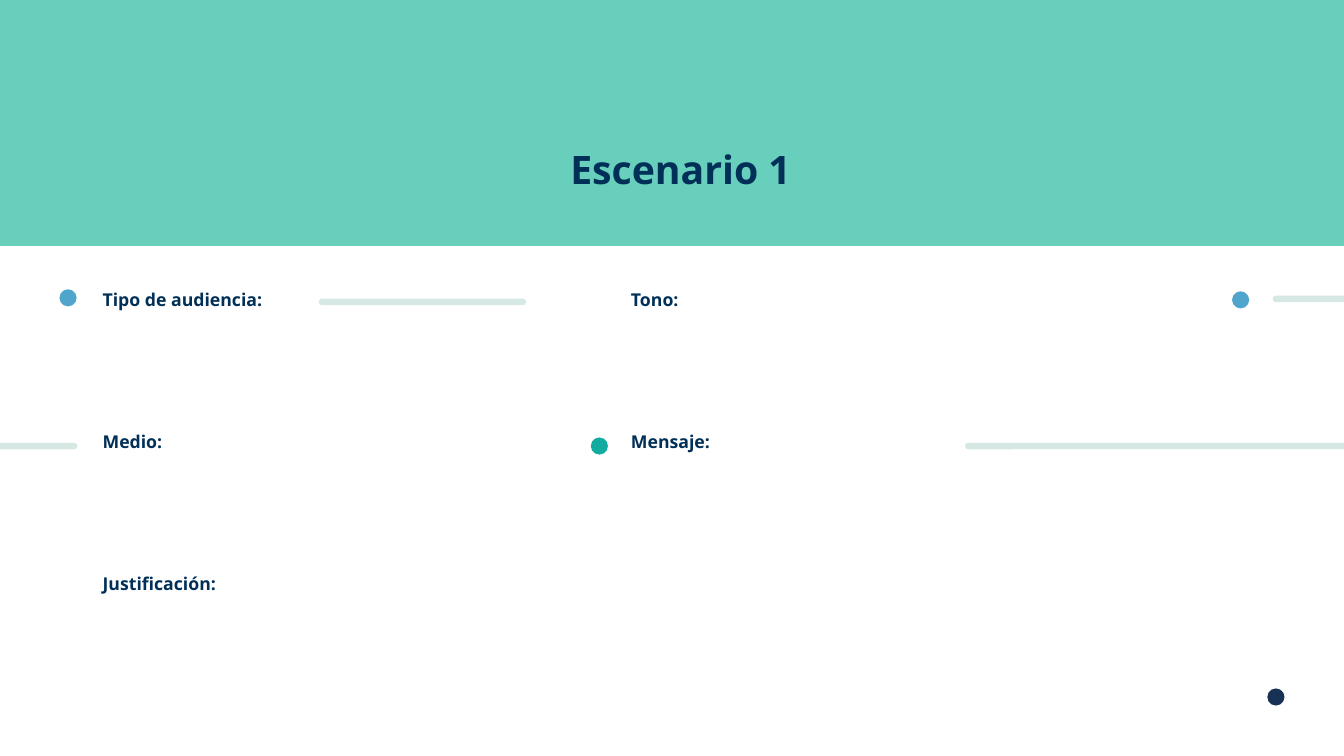
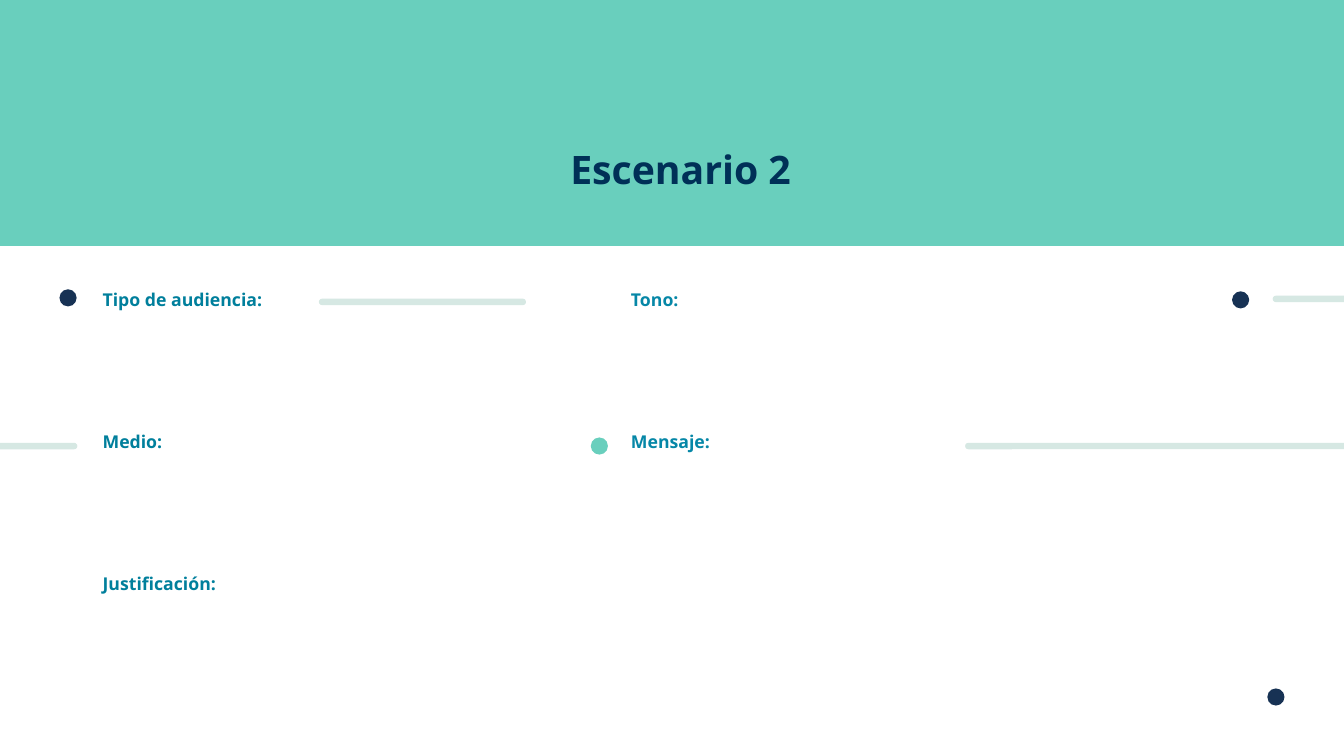
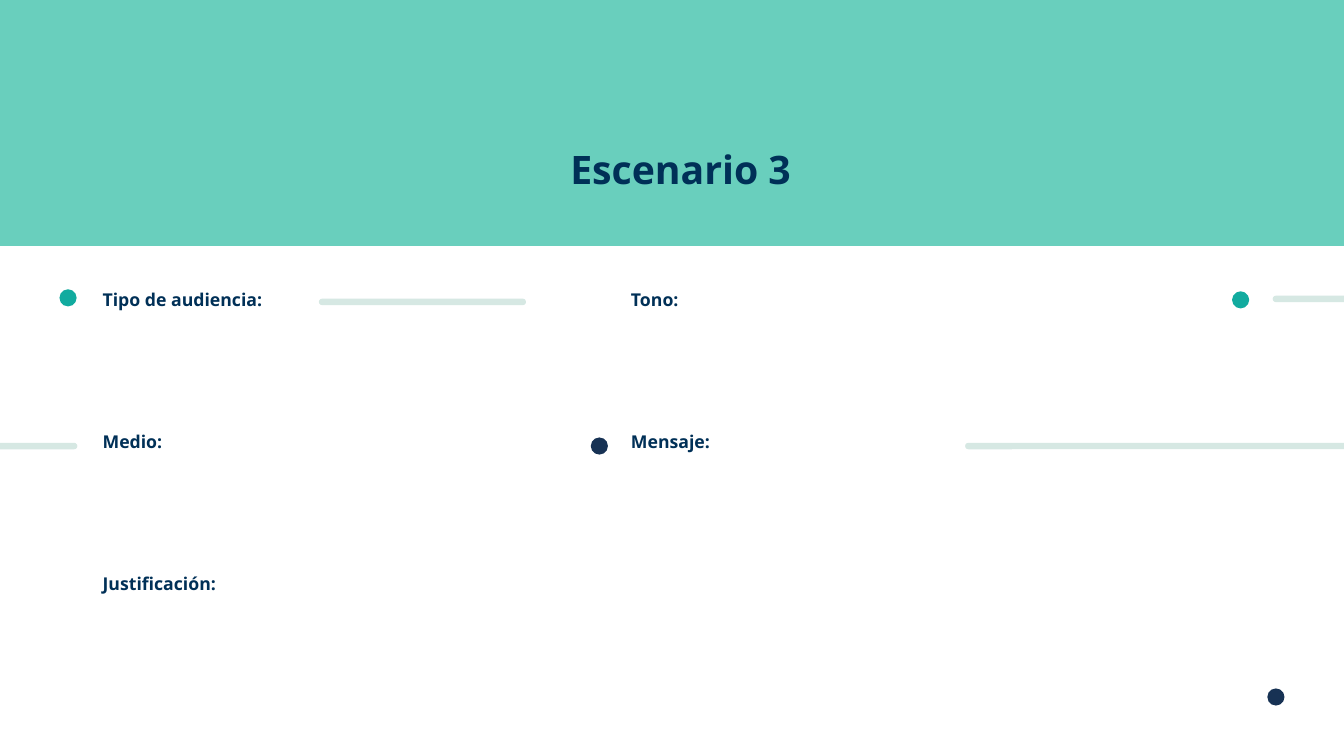
import pptx
import pptx.util
import pptx.dml.color
import pptx.enum.shapes
import pptx.enum.text

Inches = pptx.util.Inches
Pt = pptx.util.Pt
RGBColor = pptx.dml.color.RGBColor
Shape = pptx.enum.shapes.MSO_SHAPE
Anchor = pptx.enum.text.MSO_ANCHOR
Align = pptx.enum.text.PP_ALIGN

# Shared colours and font
MINT = RGBColor(0x69, 0xCF, 0xBD)
NAVY = RGBColor(0x00, 0x30, 0x57)
INK = RGBColor(0x17, 0x32, 0x54)
SKY = RGBColor(0x4F, 0xA5, 0xCB)
TEAL = RGBColor(0x12, 0xAB, 0x9F)
PALE = RGBColor(0xD6, 0xE8, 0xE3)
OCEAN = RGBColor(0x00, 0x7F, 0x9C)
LAGOON = RGBColor(0x06, 0x87, 0xA7)
FONT = "Open Sans"

# Grid, in inches
SLIDE_WIDTH, SLIDE_HEIGHT = 13.33, 7.5
BLEED = 0.03
BAND_BOTTOM = 2.44
COLUMNS = [(0.92, 4.3), (6.16, 6.41)]  # left, width
ROW_TOP, ROW_PITCH, ROW_HEIGHT = 2.87, 1.41, 0.27
ROWS = [ROW_TOP + index * ROW_PITCH for index in range(3)]
DOT_SIZE = 0.17
BAR_HEIGHT = 0.05

# Label text, column, row
LABELS = [
    ("Tipo de audiencia:", 0, 0),
    ("Medio:", 0, 1),
    ("Tono:", 1, 0),
    ("Mensaje:", 1, 1),
    ("Justificación:", 0, 2),
]

# Bars: left, top, width
BARS = [
    (3.17, ROWS[0] + 0.1, 2.04),
    (-BLEED, ROWS[1] + 0.12, 0.79),
    (9.58, ROWS[1] + 0.12, 3.83),
    (12.63, ROWS[0] + 0.07, 0.79),
]

# Title, label colour by column, outer dots, middle dot
SCENARIOS = [
    ("Escenario 1", (NAVY, NAVY), SKY, TEAL),
    ("Escenario 2", (OCEAN, LAGOON), INK, MINT),
    ("Escenario 3", (NAVY, NAVY), TEAL, INK),
]


def add_filled_shape(slide, kind, left, top, width, height, color):
    shape = slide.shapes.add_shape(
        kind, Inches(left), Inches(top), Inches(width), Inches(height))
    shape.shadow.inherit = False
    shape.fill.solid()
    shape.fill.fore_color.rgb = color
    shape.line.fill.background()
    return shape


def add_dot(slide, left, top, color):
    add_filled_shape(slide, Shape.OVAL, left, top, DOT_SIZE, DOT_SIZE, color)


def add_bar(slide, left, top, width):
    bar = add_filled_shape(
        slide, Shape.ROUNDED_RECTANGLE, left, top, width, BAR_HEIGHT, PALE)
    bar.adjustments[0] = 0.5
    bar.line.color.rgb = PALE
    bar.line.width = Pt(1)


def add_text(slide, text, left, top, width, height, size, color):
    box = slide.shapes.add_textbox(
        Inches(left), Inches(top), Inches(width), Inches(height))
    box.text_frame.word_wrap = True
    paragraph = box.text_frame.paragraphs[0]
    run = paragraph.add_run()
    run.text = text
    run.font.name = FONT
    run.font.size = Pt(size)
    run.font.bold = True
    run.font.color.rgb = color
    return box.text_frame, paragraph


def add_title(slide, text):
    frame, paragraph = add_text(
        slide, text, COLUMNS[0][0], 1.06, 11.66, 0.85, 28, NAVY)
    frame.vertical_anchor = Anchor.BOTTOM
    frame.margin_bottom = 0
    paragraph.alignment = Align.CENTER


def add_label(slide, text, column, row, color):
    left, width = COLUMNS[column]
    _, paragraph = add_text(
        slide, text, left, ROWS[row], width, ROW_HEIGHT, 12.6, color)
    paragraph.line_spacing = 0.7
    paragraph.space_before = Pt(10)


def add_scenario(presentation, title, label_colors, outer_color, middle_color):
    slide = presentation.slides.add_slide(presentation.slide_layouts[6])

    # Header band and title
    add_filled_shape(slide, Shape.RECTANGLE, 0, -BLEED, SLIDE_WIDTH,
                     BAND_BOTTOM + BLEED, MINT)
    add_title(slide, title)

    # Field labels
    for text, column, row in LABELS:
        add_label(slide, text, column, row, label_colors[column])

    # Decorative bars and dots
    for left, top, width in BARS:
        add_bar(slide, left, top, width)
    add_dot(slide, 0.59, ROWS[0], outer_color)
    add_dot(slide, 5.86, ROWS[1] + 0.06, middle_color)
    add_dot(slide, 12.22, ROWS[0] + 0.02, outer_color)
    add_dot(slide, 12.57, 6.83, INK)


def main():
    presentation = pptx.Presentation()
    presentation.slide_width = Inches(SLIDE_WIDTH)
    presentation.slide_height = Inches(SLIDE_HEIGHT)
    for scenario in SCENARIOS:
        add_scenario(presentation, *scenario)
    presentation.save("out.pptx")


if __name__ == "__main__":
    main()
